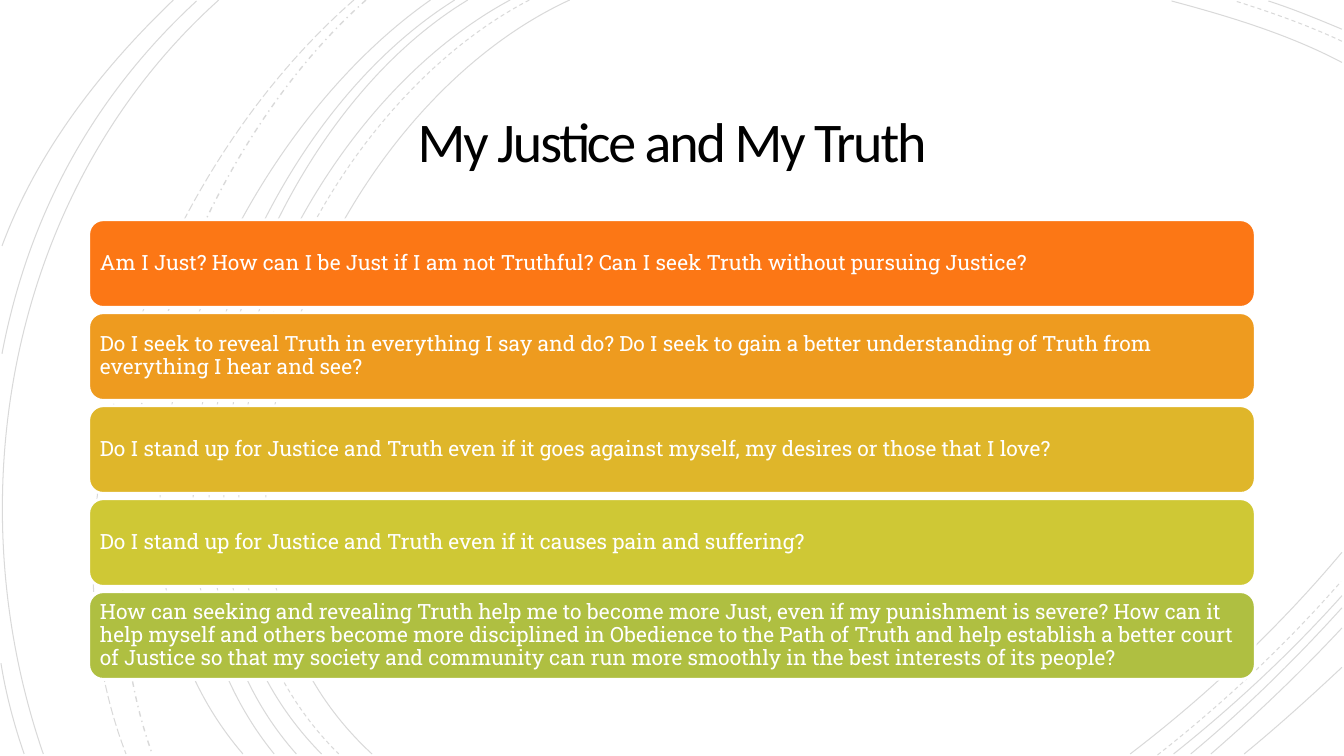
from lxml import etree
from pptx import Presentation
from pptx.dml.color import RGBColor
from pptx.enum.dml import MSO_LINE
from pptx.enum.shapes import MSO_SHAPE
from pptx.enum.text import MSO_ANCHOR, PP_ALIGN
from pptx.oxml.ns import qn
from pptx.util import Inches, Pt

SOLID, DASH = MSO_LINE.SOLID, MSO_LINE.DASH
DASH_DOT, LONG_DASH = MSO_LINE.DASH_DOT, MSO_LINE.LONG_DASH
ROUNDED = MSO_SHAPE.ROUNDED_RECTANGLE
MIDDLE = MSO_ANCHOR.MIDDLE
LEFT, CENTER = PP_ALIGN.LEFT, PP_ALIGN.CENTER

# Content
TITLE = "My Justice and My Truth"
QUESTIONS = [
    ("FC7715", "Am I Just? How can I be Just if I am not Truthful? "
               "Can I seek Truth without pursuing Justice?"),
    ("EE9B1F", "Do I seek to reveal Truth in everything I say and do? Do I seek to gain "
               "a better understanding of Truth from everything I hear and see?"),
    ("DFB62A", "Do I stand up for Justice and Truth even if it goes against myself, "
               "my desires or those that I love?"),
    ("CFC835", "Do I stand up for Justice and Truth even if it causes pain and suffering?"),
    ("AFBF41", "How can seeking and revealing Truth help me to become more Just, even if my "
               "punishment is severe? How can it help myself and others become more "
               "disciplined in Obedience to the Path of Truth and help establish a better "
               "court of Justice so that my society and community can run more smoothly in "
               "the best interests of its people?"),
]

# Background arcs: dash, line width, then start, two control points and end in inches
ARCS = [
    # Large arcs on the left
    (SOLID, 0.75, (5.65, 0), (3.15, 1.15), (1.43, 5.4), (3.69, 7.48)),
    (DASH, 0.75, (5.25, 0), (2.85, 1.25), (1.23, 5.37), (3.36, 7.48)),
    (SOLID, 0.75, (5.06, 0), (2.7, 1.27), (1.1, 5.37), (3.19, 7.48)),
    (SOLID, 0.75, (4.64, 0), (2.44, 1.33), (1.1, 5.41), (2.94, 7.48)),
    (SOLID, 0.75, (4.51, 0), (2.31, 1.38), (0.97, 5.33), (2.72, 7.48)),
    (SOLID, 0.75, (4.27, 0), (2.17, 1.47), (0.53, 5.29), (2.41, 7.48)),
    (DASH_DOT, 1, (3.63, 0), (1.76, 1.66), (0.65, 5.09), (1.51, 7.48)),
    (LONG_DASH, 0.75, (3.51, 0), (1.57, 1.69), (0.29, 4.99), (1.25, 7.48)),
    (SOLID, 0.75, (2.17, 0), (0.11, 1.85), (-0.46, 4.9), (0.43, 7.48)),
    # Short arcs at the left edge
    (SOLID, 0.75, (1.95, 0.01), (0.92, 0.96), (0.28, 2.14), (0.02, 3.51)),
    (SOLID, 0.75, (0.01, 6.58), (0.06, 6.89), (0.14, 7.19), (0.24, 7.48)),
    (SOLID, 0.75, (1.72, 0), (1, 0.69), (0.37, 1.5), (0.02, 2.44)),
    # Top right corner
    (SOLID, 0.75, (13.31, 0.62), (12.78, 0.34), (12.18, 0.16), (11.62, 0.01)),
    (DASH, 0.75, (13.31, 0.41), (12.97, 0.25), (12.6, 0.12), (12.25, 0.01)),
    (SOLID, 0.75, (13.31, 0.29), (13.07, 0.19), (12.83, 0.09), (12.58, 0.01)),
    # Bottom right corner
    (SOLID, 0.75, (11.21, 7.48), (11.97, 6.9), (12.69, 6.22), (13.31, 5.48)),
    (DASH, 0.75, (11.48, 7.49), (12.13, 6.98), (12.75, 6.4), (13.3, 5.77)),
    (SOLID, 0.75, (11.64, 7.48), (12.23, 7.01), (12.8, 6.48), (13.31, 5.91)),
    (SOLID, 0.75, (11.81, 7.48), (12.34, 7.04), (12.84, 6.55), (13.31, 6.03)),
    (SOLID, 0.75, (12.01, 7.48), (12.46, 7.09), (12.9, 6.67), (13.31, 6.23)),
    (SOLID, 0.75, (12.34, 7.48), (12.67, 7.21), (12.99, 6.92), (13.31, 6.62)),
]
ARC_OPACITY = 15

# Layout in inches
WIDTH, HEIGHT = 13.33, 7.5
BAR_WIDTH, BAR_HEIGHT = 11.57, 0.87
FIRST_BAR_TOP, LAST_BAR_TOP = 2.18, 5.87
BAR_PITCH = (LAST_BAR_TOP - FIRST_BAR_TOP) / (len(QUESTIONS) - 1)
TITLE_WIDTH, TITLE_HEIGHT, TITLE_TOP = 9.49, 1.15, 0.87


def color(value):
    return RGBColor.from_string(value)


def add_arc(slide, dash, width, *points):
    start, *rest = [(Inches(x), Inches(y)) for x, y in points]
    builder = slide.shapes.build_freeform(*start)
    builder.add_line_segments(rest, close=False)
    arc = builder.convert_to_shape()

    # Turn the three straight segments into one cubic curve
    outline = arc._element.find(".//" + qn("a:path"))
    curve = etree.SubElement(outline, qn("a:cubicBezTo"))
    for segment in outline.findall(qn("a:lnTo")):
        curve.append(segment.find(qn("a:pt")))
        outline.remove(segment)

    arc.shadow.inherit = False
    arc.fill.background()
    arc.line.color.rgb = color("000000")
    arc.line.width = Pt(width)
    arc.line.dash_style = dash
    line_color = arc.line._ln.find(".//" + qn("a:srgbClr"))
    etree.SubElement(line_color, qn("a:alpha")).set("val", str(ARC_OPACITY * 1000))


def write(shape, text, font, size, text_color, margin, spacing, alignment):
    frame = shape.text_frame
    frame.text = text
    frame.word_wrap = True
    frame.vertical_anchor = MIDDLE
    frame.margin_left = frame.margin_right = Inches(margin)
    frame.margin_top = frame.margin_bottom = Inches(margin)
    paragraph = frame.paragraphs[0]
    paragraph.alignment = alignment
    paragraph.line_spacing = spacing
    run = paragraph.runs[0]
    run.font.name = font
    run.font.size = Pt(size)
    run.font.color.rgb = color(text_color)
    return run


def main():
    presentation = Presentation()
    presentation.slide_width, presentation.slide_height = Inches(WIDTH), Inches(HEIGHT)
    slide = presentation.slides.add_slide(presentation.slide_layouts[6])

    # Background arcs
    for arc in ARCS:
        add_arc(slide, *arc)

    # Title
    title = slide.shapes.add_textbox(Inches((WIDTH - TITLE_WIDTH) / 2), Inches(TITLE_TOP),
                                     Inches(TITLE_WIDTH), Inches(TITLE_HEIGHT))
    run = write(title, TITLE, "Calibri", 40, "000000", 0.25, 0.85, CENTER)
    run.font._element.set("spc", "-150")

    # Question bars
    for row, (fill, question) in enumerate(QUESTIONS):
        bar = slide.shapes.add_shape(ROUNDED, Inches((WIDTH - BAR_WIDTH) / 2),
                                     Inches(FIRST_BAR_TOP + row * BAR_PITCH),
                                     Inches(BAR_WIDTH), Inches(BAR_HEIGHT))
        bar.shadow.inherit = False
        bar.fill.solid()
        bar.fill.fore_color.rgb = color(fill)
        bar.line.color.rgb = color("FFFFFF")
        bar.line.width = Pt(2)
        write(bar, question, "Roboto Slab", 15, "FFFFFF", 0.07, 0.9, LEFT)

    presentation.save("out.pptx")


if __name__ == "__main__":
    main()
